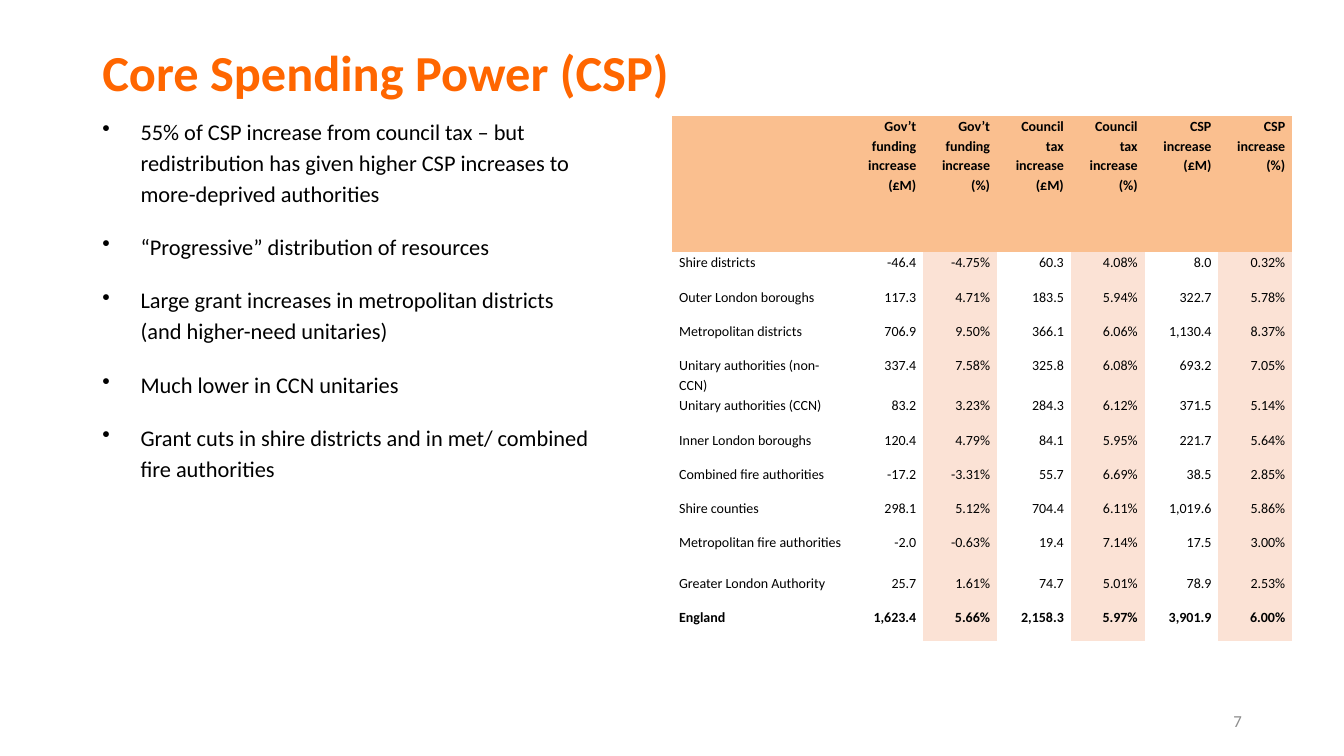
from dataclasses import dataclass

from pptx import Presentation
from pptx import util as u
from pptx.dml.color import RGBColor
from pptx.enum import text
from pptx.oxml import ns, xmlchemy

CELL = u.Inches(1 / 12)
NO_STYLE = "{2D5ABB26-0587-4C30-8999-92F81FD0307C}"


@dataclass(frozen=True)
class Theme:
    """Colours, font and type sizes of the slide."""
    font: str = "Calibri"
    title: str = "FF6600"
    ink: str = "000000"
    muted: str = "8C8C8C"
    header: str = "FABF8F"
    percent: str = "FBE2D5"
    title_size: int = 36
    body_size: int = 16
    number_size: int = 12
    table_size: int = 10
    leading: float = 1.15


@dataclass(frozen=True)
class Box:
    """A region in grid columns and rows of a twelfth of an inch."""
    left: float
    top: float
    width: float
    height: float

    def place(self):
        """Return the region as slide lengths."""
        return [round(CELL * n) for n in (self.left, self.top, self.width, self.height)]


THEME = Theme()

POINTS = [
    "55% of CSP increase from council tax – but redistribution has given higher CSP increases to more-deprived authorities",
    "“Progressive” distribution of resources",
    "Large grant increases in metropolitan districts (and higher-need unitaries)",
    "Much lower in CCN unitaries",
    "Grant cuts in shire districts and in met/ combined fire authorities",
]

HEADINGS = ["", *(f"{source} increase ({unit})"
                  for source in ("Gov’t funding", "Council tax", "CSP")
                  for unit in ("£M", "%"))]

AUTHORITIES = [
    ("Shire districts", "-46.4", "-4.75%", "60.3", "4.08%", "8.0", "0.32%"),
    ("Outer London boroughs", "117.3", "4.71%", "183.5", "5.94%", "322.7", "5.78%"),
    ("Metropolitan districts", "706.9", "9.50%", "366.1", "6.06%", "1,130.4", "8.37%"),
    ("Unitary authorities (non-CCN)", "337.4", "7.58%", "325.8", "6.08%", "693.2", "7.05%"),
    ("Unitary authorities (CCN)", "83.2", "3.23%", "284.3", "6.12%", "371.5", "5.14%"),
    ("Inner London boroughs", "120.4", "4.79%", "84.1", "5.95%", "221.7", "5.64%"),
    ("Combined fire authorities", "-17.2", "-3.31%", "55.7", "6.69%", "38.5", "2.85%"),
    ("Shire counties", "298.1", "5.12%", "704.4", "6.11%", "1,019.6", "5.86%"),
    ("Metropolitan fire authorities", "-2.0", "-0.63%", "19.4", "7.14%", "17.5", "3.00%"),
    ("Greater London Authority", "25.7", "1.61%", "74.7", "5.01%", "78.9", "2.53%"),
    ("England", "1,623.4", "5.66%", "2,158.3", "5.97%", "3,901.9", "6.00%"),
]
TALL_ROWS = ("Unitary authorities (non-CCN)", "Metropolitan fire authorities")


def write(paragraph, wording, size, color, bold=False, align=text.PP_ALIGN.LEFT, leading=1.0):
    """Write one run into a paragraph and style both."""
    paragraph.alignment = align
    paragraph.line_spacing = leading
    run = paragraph.add_run()
    run.text = wording
    run.font.name = THEME.font
    run.font.size = u.Pt(size)
    run.font.bold = bold
    run.font.color.rgb = RGBColor.from_string(color)


def add_frame(slide, box, anchor=text.MSO_ANCHOR.TOP):
    """Add a wrapping text box and return its text frame."""
    frame = slide.shapes.add_textbox(*box.place()).text_frame
    frame.word_wrap = True
    frame.vertical_anchor = anchor
    return frame


def add_title(slide, box):
    """Place the slide title."""
    frame = add_frame(slide, box, text.MSO_ANCHOR.MIDDLE)
    write(frame.paragraphs[0], "Core Spending Power (CSP)", THEME.title_size,
          THEME.title, bold=True, leading=0.9)


def add_points(slide, box):
    """Place the bulleted findings."""
    frame = add_frame(slide, box)
    indent = u.Inches(0.38)
    for index, point in enumerate(POINTS):
        paragraph = frame.add_paragraph() if index else frame.paragraphs[0]
        properties = paragraph._p.get_or_add_pPr()
        properties.set("marL", str(indent))
        properties.set("indent", str(-indent))
        bullet = xmlchemy.OxmlElement("a:buChar")
        bullet.set("char", "•")
        properties.append(bullet)
        if index:
            paragraph.space_before = u.Pt(10)
        paragraph.space_after = u.Pt(6)
        write(paragraph, point, THEME.body_size, THEME.ink, leading=THEME.leading)


def add_funding_table(slide, box):
    """Place the table of increases by type of authority."""
    rows = [HEADINGS, *AUTHORITIES]
    frame = slide.shapes.add_table(len(rows), len(HEADINGS), *box.place())
    for style in frame._element.iter(ns.qn("a:tableStyleId")):
        style.text = NO_STYLE
    table = frame.table
    table.first_row = table.horz_banding = False

    label_width = 21.1
    value_width = (box.width - label_width) / (len(HEADINGS) - 1)
    for index, column in enumerate(table.columns):
        column.width = round(CELL * (value_width if index else label_width))

    for r, values in enumerate(rows):
        height = 16.2 if r == 0 else 4.8 if values[0] in TALL_ROWS else 4.08
        table.rows[r].height = round(CELL * height)
        bold = r in (0, len(rows) - 1)
        for c, value in enumerate(values):
            cell = table.cell(r, c)
            cell.margin_left = cell.margin_right = u.Inches(0.07)
            cell.margin_top = cell.margin_bottom = 0
            if r == 0 or value.endswith("%"):
                cell.fill.solid()
                cell.fill.fore_color.rgb = RGBColor.from_string(
                    THEME.percent if r else THEME.header)
            else:
                cell.fill.background()
            if value:
                write(cell.text_frame.paragraphs[0], value, THEME.table_size, THEME.ink, bold,
                      text.PP_ALIGN.RIGHT if c else text.PP_ALIGN.LEFT, THEME.leading)


def add_slide_number(slide, box):
    """Place the slide number."""
    frame = add_frame(slide, box, text.MSO_ANCHOR.MIDDLE)
    write(frame.paragraphs[0], "7", THEME.number_size, THEME.muted,
          align=text.PP_ALIGN.RIGHT)


def main():
    """Build the slide and save it."""
    deck = Presentation()
    deck.slide_width, deck.slide_height = u.Inches(13.33), u.Inches(7.5)
    slide = deck.slides.add_slide(deck.slide_layouts[6])
    add_title(slide, Box(11, 5, 144, 8))
    add_points(slide, Box(11, 13, 61, 72))
    add_slide_number(slide, Box(113, 83.4, 36, 4.8))
    add_funding_table(slide, Box(80, 13.8, 73.8, 62.52))
    deck.save("out.pptx")


if __name__ == "__main__":
    main()
